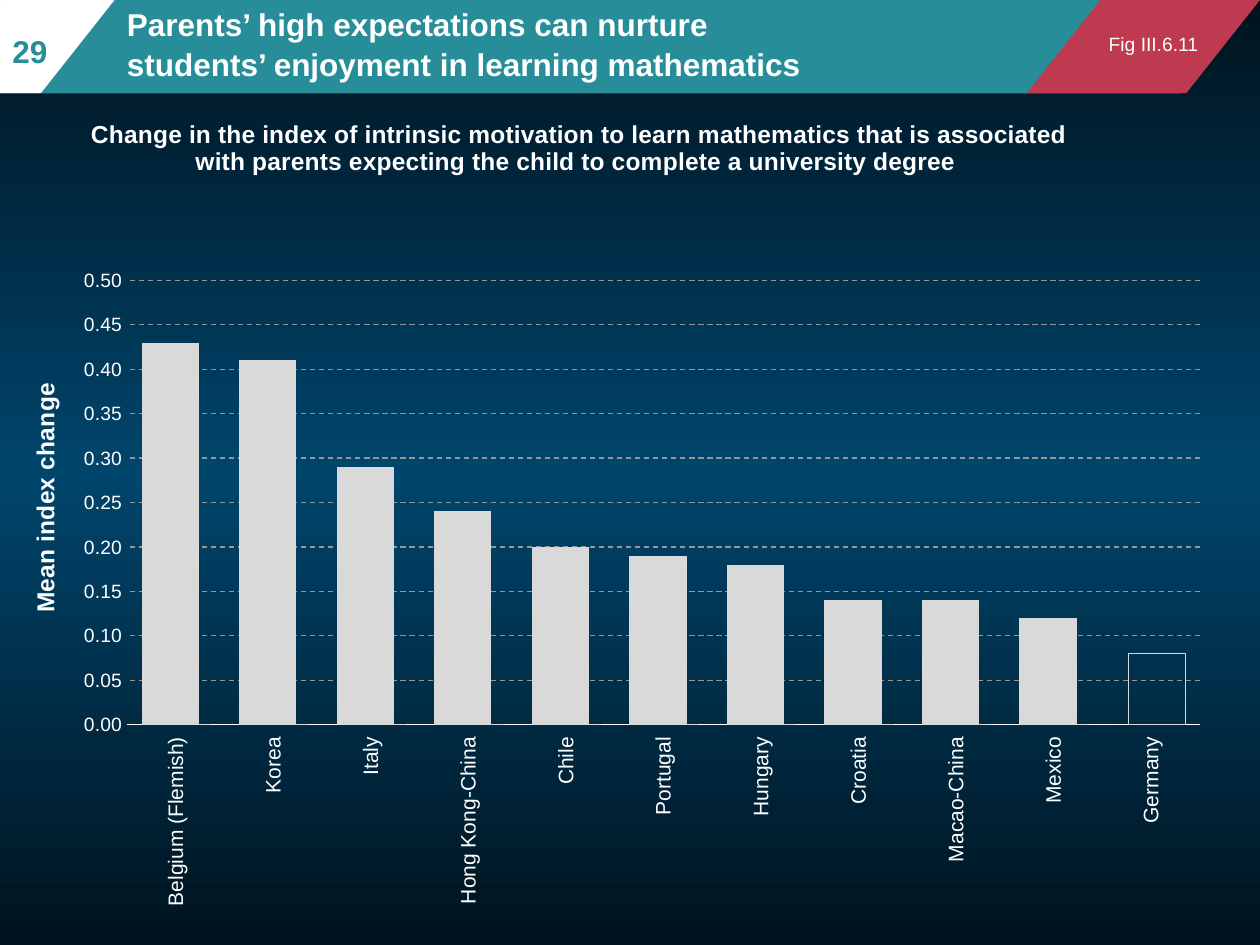
from copy import deepcopy

from lxml import etree
from pptx import Presentation
from pptx.chart.data import CategoryChartData
from pptx.dml.color import RGBColor
from pptx.enum.chart import XL_CHART_TYPE, XL_TICK_LABEL_POSITION, XL_TICK_MARK
from pptx.enum.dml import MSO_LINE
from pptx.enum.shapes import MSO_SHAPE
from pptx.enum.text import MSO_ANCHOR
from pptx.oxml.ns import qn
from pptx.util import Cm, Pt

SLANT = MSO_SHAPE.PARALLELOGRAM
COLUMN = XL_CHART_TYPE.COLUMN_CLUSTERED
LOW = XL_TICK_LABEL_POSITION.LOW
NO_TICK = XL_TICK_MARK.NONE
DASH = MSO_LINE.DASH
TOP, MIDDLE = MSO_ANCHOR.TOP, MSO_ANCHOR.MIDDLE

FONT = "Arial"
WHITE, TEAL, RED = "FFFFFF", "278D99", "BE3A50"
NIGHT, BLUE, PALE, GRID = "00131E", "00456C", "D9D9D9", "969696"

HEAD = "Change in the index of intrinsic motivation to learn mathematics that is associated with parents expecting the child to complete a university degree "
MEANS = [
    ("Belgium (Flemish)", 0.43), ("Korea", 0.41), ("Italy", 0.29),
    ("Hong Kong-China", 0.24), ("Chile", 0.20), ("Portugal", 0.19),
    ("Hungary", 0.18), ("Croatia", 0.14), ("Macao-China", 0.14),
    ("Mexico", 0.12), ("Germany", 0.08),
]
HOLLOW = "Germany"


def tint(code):
    return RGBColor.from_string(code)


def style(font, size, color, bold=False):
    font.name, font.size, font.bold = FONT, Pt(size), bold
    font.color.rgb = tint(color)


def paint(slide):
    """Fill the background with a dark-blue-dark gradient."""
    fill = slide.background.fill
    fill.gradient()
    fill.gradient_angle = 90
    stops = slide._element.find(".//" + qn("a:gsLst"))
    stops.insert(1, deepcopy(stops[0]))
    for stop, place, color in zip(fill.gradient_stops, (0, 0.5, 1), (NIGHT, BLUE, NIGHT)):
        stop.position = place
        stop.color.rgb = tint(color)


def add_slant(slide, x, y, w, h, color):
    shape = slide.shapes.add_shape(SLANT, Cm(x), Cm(y), Cm(w), Cm(h))
    shape.adjustments[0] = 0.79
    shape.shadow.inherit = False
    shape.fill.solid()
    shape.fill.fore_color.rgb = tint(color)
    shape.line.fill.background()


def add_text(slide, x, y, w, h, lines, size, color, bold=False, anchor=TOP, gap=1.0):
    frame = slide.shapes.add_textbox(Cm(x), Cm(y), Cm(w), Cm(h)).text_frame
    frame.word_wrap = True
    frame.vertical_anchor = anchor
    para = frame.paragraphs[0]
    para.line_spacing = gap
    for i, line in enumerate(lines):
        if i:
            para.add_line_break()
        run = para.add_run()
        run.text = line
        style(run.font, size, color, bold)


def add_banner(slide, x, y, w, h):
    bands = [(-0.51, 25.81, WHITE), (-1.5, 23.8, TEAL),
             (-1.47, 3.78, WHITE), (w - 4.7, 4.7, RED)]
    for left, wide, color in bands:
        add_slant(slide, x + left, y, wide, h, color)
    title = ["Parents’ high expectations can nurture ",
             "students’ enjoyment in learning mathematics"]
    add_text(slide, x + 2.31, y, 18.21, 1.73, title, 18, WHITE, True, MIDDLE, 1.05)
    add_text(slide, x, y + 0.53, 1.9, 1.02, ["29"], 18, TEAL, True)
    add_text(slide, x + w - 3.3, y + 0.53, 3.15, 0.94, ["Fig III.6.11"], 11, WHITE)


def lay_out(node, index, inner=False, **sizes):
    """Place a chart part by fractions of the chart's size."""
    for old in node.findall(qn("c:layout")):
        node.remove(old)
    layout = etree.Element(qn("c:layout"))
    manual = etree.SubElement(layout, qn("c:manualLayout"))
    values = {"layoutTarget": "inner"} if inner else {}
    values.update(xMode="edge", yMode="edge", **sizes)
    for name, value in values.items():
        etree.SubElement(manual, qn("c:" + name)).set("val", str(value))
    node.insert(index, layout)


def add_label(title, text, x, y):
    run = title.text_frame.paragraphs[0].add_run()
    run.text = text
    style(run.font, 14, WHITE, True)
    lay_out(title._element, 1, x=x, y=y)


def style_axes(chart):
    cat, val = chart.category_axis, chart.value_axis
    for axis, size in ((cat, 12), (val, 11)):
        axis.major_tick_mark = axis.minor_tick_mark = NO_TICK
        style(axis.tick_labels.font, size, WHITE)
    cat.tick_label_position = LOW
    cat.format.line.color.rgb = tint(WHITE)
    cat.format.line.width = Pt(0.75)
    turn = cat._element.find(qn("c:txPr")).find(qn("a:bodyPr"))
    turn.set("rot", "-5400000")
    turn.set("vert", "horz")
    val.minimum_scale, val.maximum_scale, val.major_unit = 0, 0.5, 0.05
    val.tick_labels.number_format = "0.00"
    val.tick_labels.number_format_is_linked = False
    val.format.line.fill.background()
    grid = val.major_gridlines.format.line
    grid.color.rgb = tint(GRID)
    grid.width = Pt(0.75)
    grid.dash_style = DASH
    add_label(val.axis_title, "Mean index change", 0.02, 0.32)


def add_means(slide, x, y, w, h):
    data = CategoryChartData(number_format="0.00")
    data.categories = [name for name, _ in MEANS]
    data.add_series("Series 1", [0 if name == HOLLOW else mean for name, mean in MEANS])
    data.add_series("Series 2", [mean if name == HOLLOW else 0 for name, mean in MEANS])
    chart = slide.shapes.add_chart(COLUMN, Cm(x), Cm(y), Cm(w), Cm(h), data).chart
    style(chart.font, 16, "000000")
    chart.has_legend = False
    add_label(chart.chart_title, HEAD, 0.07, 0.02)
    plot = chart.plots[0]
    plot.vary_by_categories = False
    plot.gap_width, plot.overlap = 50, 80
    solid, hollow = plot.series
    solid.format.fill.solid()
    solid.format.fill.fore_color.rgb = tint(PALE)
    hollow.format.fill.background()
    hollow.format.line.color.rgb = tint(PALE)
    hollow.format.line.width = Pt(0.75)
    style_axes(chart)
    area = chart._chartSpace.find(".//" + qn("c:plotArea"))
    lay_out(area, 0, True, x=0.103, y=0.209, w=0.869, h=0.503)


def main():
    deck = Presentation()
    deck.slide_width, deck.slide_height = Cm(25.4), Cm(19.05)
    slide = deck.slides.add_slide(deck.slide_layouts[6])
    paint(slide)
    add_banner(slide, 0, 0, 25.4, 1.88)
    add_means(slide, 0, 1.93, 24.89, 17.81)
    deck.save("out.pptx")


if __name__ == "__main__":
    main()
